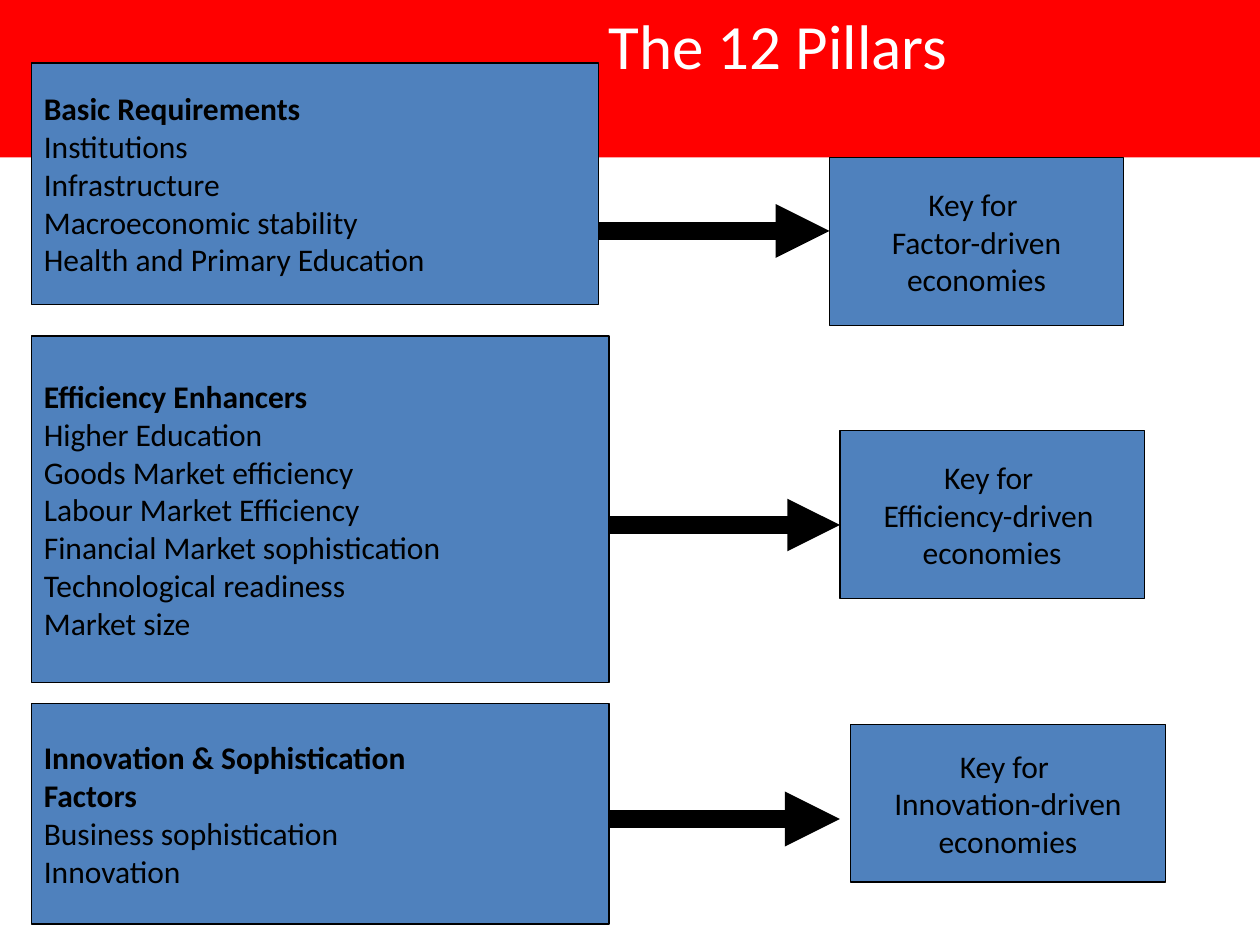
import pptx
import pptx.dml.color
import pptx.enum.shapes
import pptx.enum.text
import pptx.oxml
import pptx.util
from pptx.oxml import ns

ALIGN = pptx.enum.text.PP_ALIGN
ANCHOR = pptx.enum.text.MSO_ANCHOR
RED, BLUE, BLACK, WHITE = "FF0000", "4F81BD", "000000", "FFFFFF"

# The slide is a grid of 120 columns by 90 rows, each 1/12 inch.
COLUMNS, ROWS = 120, 90
BANNER_ROWS = 15
TITLE = "The 12 Pillars"
TITLE_INSET = 2.45  # inches; moves the centred title to the right

# Boxes are (column, row, columns, rows).
STAGES = [
    {
        "heading": ["Basic Requirements"],
        "pillars": ["Institutions", "Infrastructure", "Macroeconomic stability",
                    "Health and Primary Education"],
        "pillar_box": (3, 6, 54, 23),
        "key": ["Key for ", "Factor-driven", "economies"],
        "key_box": (79, 15, 28, 16),
        "arrow": {"row": 22, "end": 79, "weight": 10.25},
    },
    {
        "heading": ["Efficiency Enhancers"],
        "pillars": ["Higher Education", "Goods Market efficiency",
                    "Labour Market Efficiency", "Financial Market sophistication",
                    "Technological readiness", "Market size"],
        "pillar_box": (3, 32, 55, 33),
        "key": ["Key for ", "Efficiency-driven ", "economies"],
        "key_box": (80, 41, 29, 16),
        "arrow": {"row": 50, "end": 80, "weight": 10},
    },
    {
        "heading": ["Innovation & Sophistication", "Factors"],
        "pillars": ["Business sophistication", "Innovation"],
        "pillar_box": (3, 67, 55, 21),
        "key": ["Key for ", "Innovation-driven", "economies"],
        "key_box": (81, 69, 30, 15),
        "arrow": {"row": 78, "end": 80, "weight": 10.5},
    },
]


def grid(units):
    return pptx.util.Inches(units / 12)


def color(hex_text):
    return pptx.dml.color.RGBColor.from_string(hex_text)


def add_box(page, place, fill, line=None):
    box = page.shapes.add_shape(
        pptx.enum.shapes.MSO_SHAPE.RECTANGLE, *map(grid, place))
    box.shadow.inherit = False
    box.fill.solid()
    box.fill.fore_color.rgb = color(fill)
    if line:
        box.line.color.rgb = color(line)
        box.line.width = pptx.util.Pt(0.75)
    else:
        box.line.fill.background()
    return box


def write(box, lines, size=18, ink=BLACK, align=ALIGN.LEFT,
          anchor=ANCHOR.MIDDLE, bold_lines=0, wrap=False):
    """Put one paragraph per line in the box, the first bold_lines in bold."""
    frame = box.text_frame
    frame.word_wrap = wrap
    frame.vertical_anchor = anchor
    for index, text in enumerate(lines):
        para = frame.add_paragraph() if index else frame.paragraphs[0]
        para.alignment = align
        span = para.add_run()
        span.text = text
        span.font.name = "Calibri"
        span.font.size = pptx.util.Pt(size)
        span.font.bold = index < bold_lines
        span.font.color.rgb = color(ink)


def add_arrow(page, start, end, row, weight):
    arrow = page.shapes.add_connector(
        pptx.enum.shapes.MSO_CONNECTOR.STRAIGHT,
        grid(start), grid(row), grid(end), grid(row))
    arrow.line.color.rgb = color(BLACK)
    arrow.line.width = pptx.util.Pt(weight)
    for parent, tag in ((arrow.line._get_or_add_ln(), '<a:tailEnd %s type="triangle"/>'),
                        (arrow._element.spPr, "<a:effectLst %s/>")):
        parent.append(pptx.oxml.parse_xml(tag % ns.nsdecls("a")))


def main():
    deck = pptx.Presentation()
    deck.slide_width, deck.slide_height = grid(COLUMNS), grid(ROWS)
    page = deck.slides.add_slide(deck.slide_layouts[6])

    banner = add_box(page, (0, 0, COLUMNS, BANNER_ROWS), RED)
    banner.text_frame.margin_left = pptx.util.Inches(TITLE_INSET)
    write(banner, [TITLE], size=36, ink=WHITE, align=ALIGN.CENTER,
          anchor=ANCHOR.TOP, wrap=True)

    for stage in STAGES:
        pillar_box = add_box(page, stage["pillar_box"], BLUE, BLACK)
        write(pillar_box, stage["heading"] + stage["pillars"],
              bold_lines=len(stage["heading"]))
        key_box = add_box(page, stage["key_box"], BLUE, BLACK)
        write(key_box, stage["key"], align=ALIGN.CENTER)
        left, _, width, _ = stage["pillar_box"]
        add_arrow(page, left + width, **stage["arrow"])

    deck.save("out.pptx")


if __name__ == "__main__":
    main()
